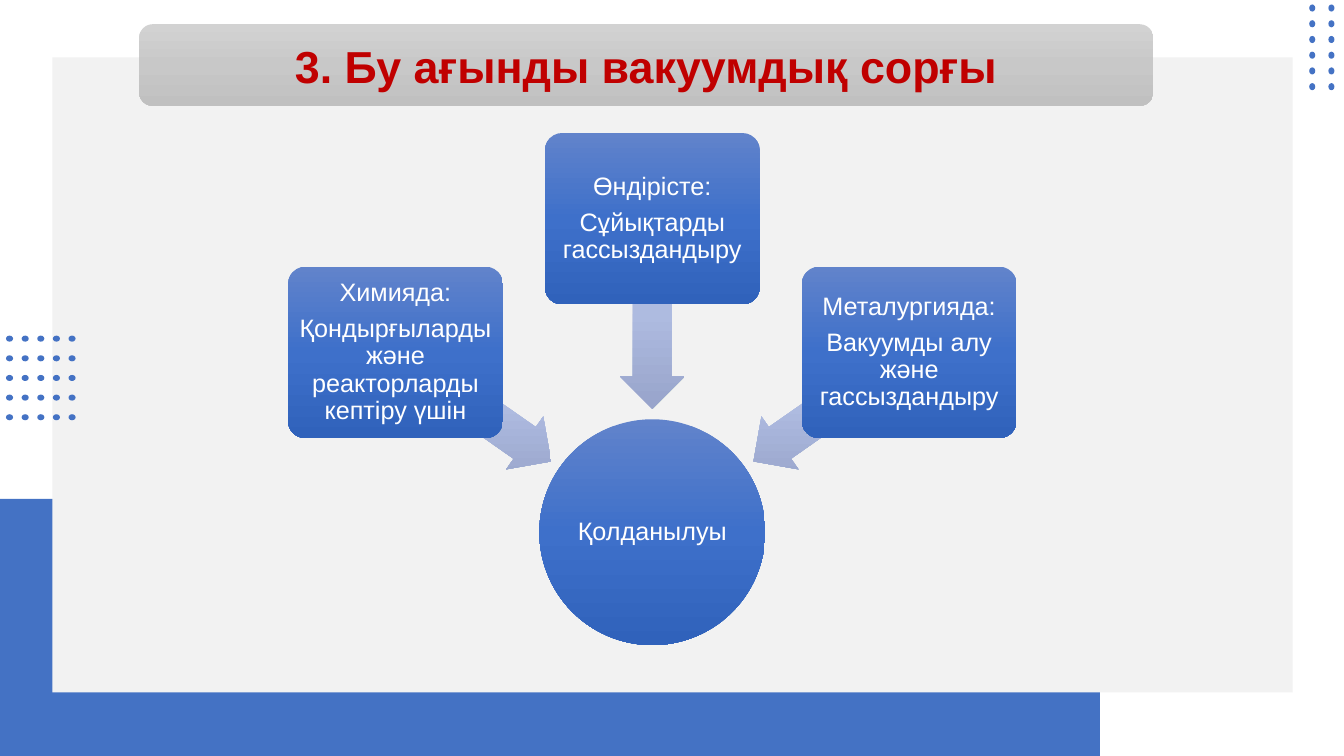
from copy import deepcopy
from dataclasses import dataclass
from math import cos, radians, sin

from pptx import Presentation
from pptx.dml.color import RGBColor
from pptx.enum.shapes import MSO_SHAPE
from pptx.enum.text import MSO_ANCHOR, MSO_AUTO_SIZE, PP_ALIGN
from pptx.oxml.ns import qn
from pptx.util import Inches, Pt

RECT = MSO_SHAPE.RECTANGLE
ROUND = MSO_SHAPE.ROUNDED_RECTANGLE
OVAL = MSO_SHAPE.OVAL
ARROW = MSO_SHAPE.LEFT_ARROW
MIDDLE = MSO_ANCHOR.MIDDLE
CENTER = PP_ALIGN.CENTER
FIXED = MSO_AUTO_SIZE.NONE


@dataclass(frozen=True)
class Theme:
    font: str = "Arial"
    blue: str = "4472C4"
    panel: str = "F2F2F2"
    title: str = "C00000"
    white: str = "FFFFFF"
    plate: tuple = ("D2D2D2", "C8C8C8", "C0C0C0")
    node: tuple = ("6183CB", "3E70CA", "3062BB")
    arrow: tuple = ("BBC5E3", "AEBBE0", "98A4CB")
    head: int = 32
    body: int = 18
    gap: float = 6.3


THEME = Theme()
HUB = (6.47, 5.28)
HUB_SIZE = 2.24
ARROW_REACH = 2.17
BOX_REACH = 3.11
BRANCHES = [
    (215, ["Химияда:", "Қондырғыларды және реакторларды кептіру үшін"]),
    (270, ["Өндірісте:", "Сұйықтарды гассыздандыру"]),
    (325, ["Металургияда:", "Вакуумды алу және гассыздандыру"]),
]


def shade(shape, colors):
    fill = shape.fill
    fill.gradient()
    fill.gradient_angle = 270
    grad = shape._element.spPr.find(qn("a:gradFill"))
    grad.set("rotWithShape", "0")
    stops = grad.find(qn("a:gsLst"))
    stops.insert(1, deepcopy(stops[0]))
    for stop, color, place in zip(fill.gradient_stops, colors, (0, 0.5, 1)):
        stop.position = place
        stop.color.rgb = RGBColor.from_string(color)


def add_form(shapes, kind, left, top, width, height, paint):
    shape = shapes.add_shape(kind, Inches(left), Inches(top), Inches(width), Inches(height))
    shape.shadow.inherit = False
    shape.line.fill.background()
    if isinstance(paint, tuple):
        shade(shape, paint)
    else:
        shape.fill.solid()
        shape.fill.fore_color.rgb = RGBColor.from_string(paint)
    return shape


def add_mid(shapes, kind, mid, width, height, paint):
    left, top = mid[0] - width / 2, mid[1] - height / 2
    return add_form(shapes, kind, left, top, width, height, paint)


def write(shape, lines, size, color, bold=False):
    frame = shape.text_frame
    frame.text = "\n".join(lines)
    frame.word_wrap = True
    frame.auto_size = FIXED
    frame.vertical_anchor = MIDDLE
    for index, para in enumerate(frame.paragraphs):
        para.alignment = CENTER
        para.line_spacing = 0.9
        para.space_before = Pt(THEME.gap if index else 0)
        for run in para.runs:
            run.font.name = THEME.font
            run.font.size = Pt(size)
            run.font.bold = bold
            run.font.color.rgb = RGBColor.from_string(color)


def label(shape, lines, inset):
    write(shape, lines, THEME.body, THEME.white)
    frame = shape.text_frame
    frame.margin_left = frame.margin_right = Inches(inset)
    frame.margin_top = frame.margin_bottom = Inches(inset)


def add_dots(slide, left, top, cols, rows, step_x, step_y, turn=0):
    group = slide.shapes.add_group_shape()
    for col in range(cols):
        for row in range(rows):
            x, y = left + col * step_x, top + row * step_y
            dot = add_form(group.shapes, OVAL, x, y, 0.07, 0.06, THEME.blue)
            dot.rotation = turn


def add_title(slide, text):
    add_form(slide.shapes, ROUND, 1.38, 0.24, 10.06, 0.81, THEME.plate)
    title = slide.shapes.title
    title.left, title.top = Inches(1.25), Inches(0.32)
    title.width, title.height = Inches(10.32), Inches(0.73)
    write(title, [text], THEME.head, THEME.title, True)
    slide.shapes._spTree.append(title._element)


def polar(reach, angle):
    turn = radians(angle)
    return HUB[0] + reach * cos(turn), HUB[1] + reach * sin(turn)


def add_branch(shapes, angle, lines):
    arrow = add_mid(shapes, ARROW, polar(ARROW_REACH, angle), 1.89, 0.64, THEME.arrow)
    arrow.rotation = angle
    arrow.adjustments[0] = 0.6
    arrow.adjustments[1] = 0.5
    box = add_mid(shapes, ROUND, polar(BOX_REACH, angle), 2.13, 1.7, THEME.node)
    box.adjustments[0] = 0.1
    label(box, lines, 0.04)


def main():
    deck = Presentation()
    deck.slide_width, deck.slide_height = Inches(13.33), Inches(7.5)
    slide = deck.slides.add_slide(deck.slide_layouts[5])

    add_form(slide.shapes, RECT, 0, 4.95, 10.91, 2.55, THEME.blue)
    add_form(slide.shapes, RECT, 0.52, 0.57, 12.3, 6.3, THEME.panel)
    add_dots(slide, 12.98, 0.05, 2, 6, 0.19, 0.156, 90)
    add_dots(slide, 0.06, 3.33, 5, 5, 0.155, 0.195)
    add_title(slide, "3. Бу ағынды вакуумдық сорғы")

    shapes = slide.shapes.add_group_shape().shapes
    hub = add_mid(shapes, OVAL, HUB, HUB_SIZE, HUB_SIZE, THEME.node)
    label(hub, ["Қолданылуы"], 0.01)
    for angle, lines in BRANCHES:
        add_branch(shapes, angle, lines)

    deck.save("out.pptx")


if __name__ == "__main__":
    main()
